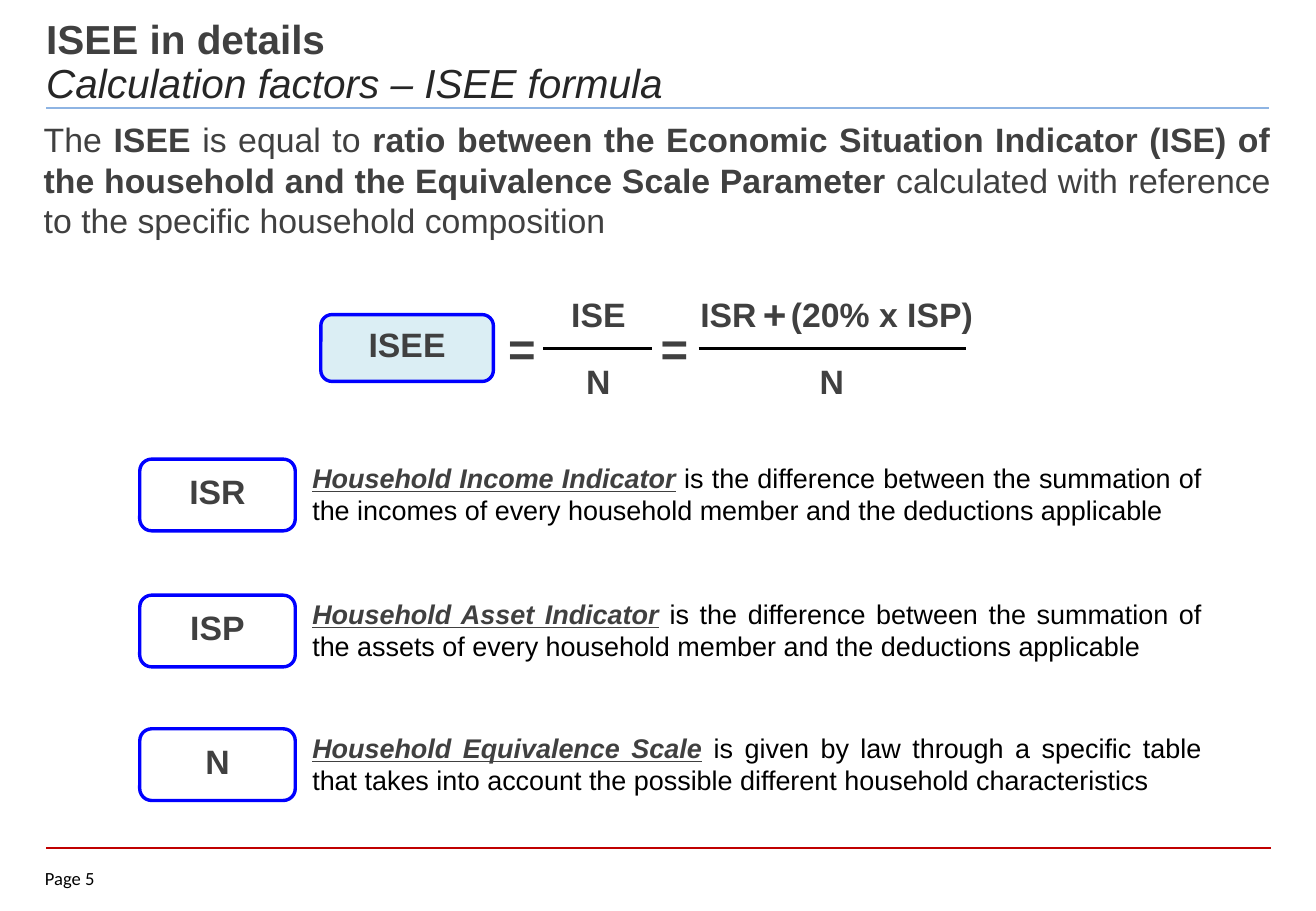
from typing import NamedTuple

from lxml import etree
from pptx import Presentation
from pptx.dml.color import RGBColor
from pptx.enum import shapes, text
from pptx.oxml import ns
from pptx.util import Inches, Pt

DARK_GRAY = RGBColor(0x40, 0x40, 0x40)
CHARCOAL = RGBColor(0x26, 0x26, 0x26)
BLACK = RGBColor(0, 0, 0)
WHITE = RGBColor(0xFF, 0xFF, 0xFF)
BLUE = RGBColor(0, 0, 0xFF)
PALE_BLUE = RGBColor(0xDB, 0xEE, 0xF4)
RULE_BLUE = RGBColor(0x8E, 0xB4, 0xE3)
RULE_RED = RGBColor(0xC0, 0, 0)
ALIGN = text.PP_ALIGN


class Area(NamedTuple):
    left: float
    top: float
    width: float
    height: float


class Span(NamedTuple):
    words: str
    size: float = 20
    color: RGBColor = DARK_GRAY
    bold: bool = False
    italic: bool = False
    underline: bool = False
    font: str = "Arial"


class Rule(NamedTuple):
    left: float
    right: float
    top: float
    color: RGBColor
    weight: float


class Term(NamedTuple):
    words: str
    area: Area
    size: float = 20
    align: ALIGN = ALIGN.CENTER
    wrap: bool = True


class Definition(NamedTuple):
    symbol: str
    name: str
    meaning: str
    top: float


RULES = [
    Rule(0.38, 10.46, 6.98, RULE_RED, 1),
    Rule(0.38, 10.44, 0.89, RULE_BLUE, 1.5),
    Rule(4.47, 5.37, 2.87, BLACK, 2.25),
    Rule(5.75, 7.95, 2.87, BLACK, 2.25),
]
TERMS = [
    Term("=", Area(4.06, 2.58, 0.47, 0.57), 28),
    Term("ISE", Area(4.53, 2.37, 0.79, 0.44)),
    Term("N", Area(4.53, 2.92, 0.79, 0.44)),
    Term("=", Area(4.84, 2.58, 1.42, 0.57), 28),
    Term("ISR", Area(5.64, 2.37, 0.71, 0.44)),
    Term("+", Area(5.92, 2.33, 0.91, 0.5), 24),
    Term("(20% x ISP)", Area(6.41, 2.37, 1.79, 0.44), 20, ALIGN.LEFT, False),
    Term("N", Area(6.39, 2.92, 0.91, 0.44)),
]
DEFINITIONS = [
    Definition("ISR", "Household Income Indicator",
               "is the difference between the summation of the incomes of every "
               "household member and the deductions applicable", 3.78),
    Definition("ISP", "Household Asset Indicator",
               "is the difference between the summation of the assets of every "
               "household member and the deductions applicable", 4.9),
    Definition("N", "Household Equivalence Scale",
               "is given by law through a specific table that takes into account "
               "the possible different household characteristics", 6),
]


def lengths(area: Area) -> list:
    return [Inches(value) for value in area]


def place(box, area: Area) -> None:
    box.left, box.top, box.width, box.height = lengths(area)


def clear_margins(frame) -> None:
    frame.margin_left = frame.margin_right = 0
    frame.margin_top = frame.margin_bottom = 0


def fill_paragraph(para, spans: list[Span], align: ALIGN) -> None:
    para.alignment = align
    for span in spans:
        run = para.add_run()
        run.text = span.words
        run.font.name = span.font
        run.font.size = Pt(span.size)
        run.font.color.rgb = span.color
        run.font.bold = span.bold
        run.font.italic = span.italic
        run.font.underline = span.underline


def add_text(parent, area: Area, spans: list[Span], align: ALIGN,
             margins: bool = False, wrap: bool = True) -> None:
    frame = parent.add_textbox(*lengths(area)).text_frame
    frame.word_wrap = wrap
    if not margins:
        clear_margins(frame)
    fill_paragraph(frame.paragraphs[0], spans, align)


def add_label(parent, area: Area, words: str, fill: RGBColor) -> None:
    label = parent.add_shape(shapes.MSO_SHAPE.ROUNDED_RECTANGLE, *lengths(area))
    label.shadow.inherit = False
    label.fill.solid()
    label.fill.fore_color.rgb = fill
    label.line.color.rgb = BLUE
    label.line.width = Pt(2)
    frame = label.text_frame
    frame.vertical_anchor = text.MSO_ANCHOR.MIDDLE
    clear_margins(frame)
    para = frame.paragraphs[0]
    para.line_spacing = 0.8
    fill_paragraph(para, [Span(words, bold=True)], ALIGN.CENTER)


def add_rule(page, rule: Rule) -> None:
    top = Inches(rule.top)
    line = page.shapes.add_connector(shapes.MSO_CONNECTOR.STRAIGHT,
                                     Inches(rule.left), top, Inches(rule.right), top)
    line.line.color.rgb = rule.color
    line.line.width = Pt(rule.weight)
    etree.SubElement(line._element.spPr, ns.qn("a:effectLst"))


def write_title(title) -> None:
    place(title, Area(0.38, 0.19, 7.72, 0.71))
    frame = title.text_frame
    frame.auto_size = text.MSO_AUTO_SIZE.NONE
    frame.vertical_anchor = text.MSO_ANCHOR.TOP
    clear_margins(frame)
    heading, subheading = frame.paragraphs[0], frame.add_paragraph()
    heading.line_spacing = subheading.line_spacing = 0.8
    subheading.space_before = Pt(3)
    fill_paragraph(heading, [Span("ISEE in details", 24, bold=True)], ALIGN.JUSTIFY)
    fill_paragraph(subheading, [Span("Calculation factors – ISEE formula", 24,
                                     CHARCOAL, italic=True)], ALIGN.JUSTIFY)


def write_body(body) -> None:
    place(body, Area(0.36, 0.98, 10.1, 0.39))
    frame = body.text_frame
    frame.auto_size = text.MSO_AUTO_SIZE.NONE
    clear_margins(frame)
    para = frame.paragraphs[0]
    properties = para._p.get_or_add_pPr()
    properties.set("marL", "0")
    properties.set("indent", "0")
    etree.SubElement(properties, ns.qn("a:buNone"))
    para.space_before = Pt(0)
    para.space_after = Pt(3)
    fill_paragraph(para, [
        Span("The "),
        Span("ISEE ", bold=True),
        Span("is equal to "),
        Span("ratio between the Economic Situation Indicator (ISE) of the household "
             "and the Equivalence Scale Parameter ", bold=True),
        Span("calculated with reference to the specific household composition"),
    ], ALIGN.JUSTIFY)


def add_definition(page, item: Definition) -> None:
    group = page.shapes.add_group_shape().shapes
    add_text(group, Area(2.57, item.top + 0.02, 7.32, 0.55), [
        Span(item.name, 16, bold=True, italic=True, underline=True),
        Span(" ", 16, bold=True, italic=True),
        Span(item.meaning, 16, BLACK),
    ], ALIGN.JUSTIFY)
    add_label(group, Area(1.15, item.top, 1.28, 0.59), item.symbol, WHITE)


def main() -> None:
    deck = Presentation()
    deck.slide_width, deck.slide_height = Inches(10.83), Inches(7.5)
    page = deck.slides.add_slide(deck.slide_layouts[1])
    write_title(page.shapes.title)
    write_body(page.placeholders[1])
    for rule in RULES:
        add_rule(page, rule)
    add_label(page.shapes, Area(2.64, 2.59, 1.42, 0.55), "ISEE", PALE_BLUE)
    for term in TERMS:
        add_text(page.shapes, term.area, [Span(term.words, term.size, bold=True)],
                 term.align, margins=True, wrap=term.wrap)
    for item in DEFINITIONS:
        add_definition(page, item)
    add_text(page.shapes, Area(0.37, 7.14, 0.73, 0.22),
             [Span("Page 5", 11, BLACK, font="Calibri")], ALIGN.LEFT)
    deck.save("out.pptx")


if __name__ == "__main__":
    main()
